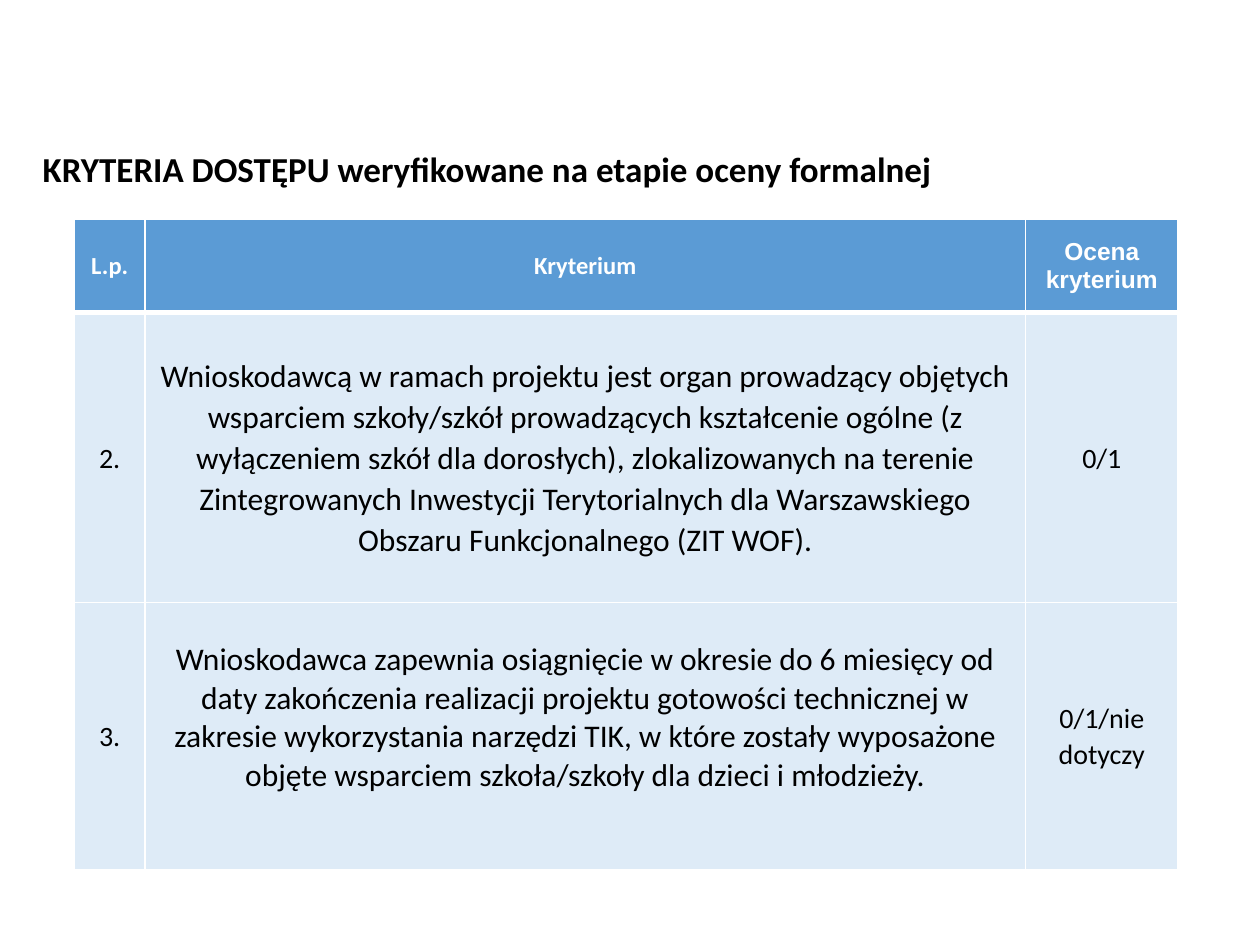
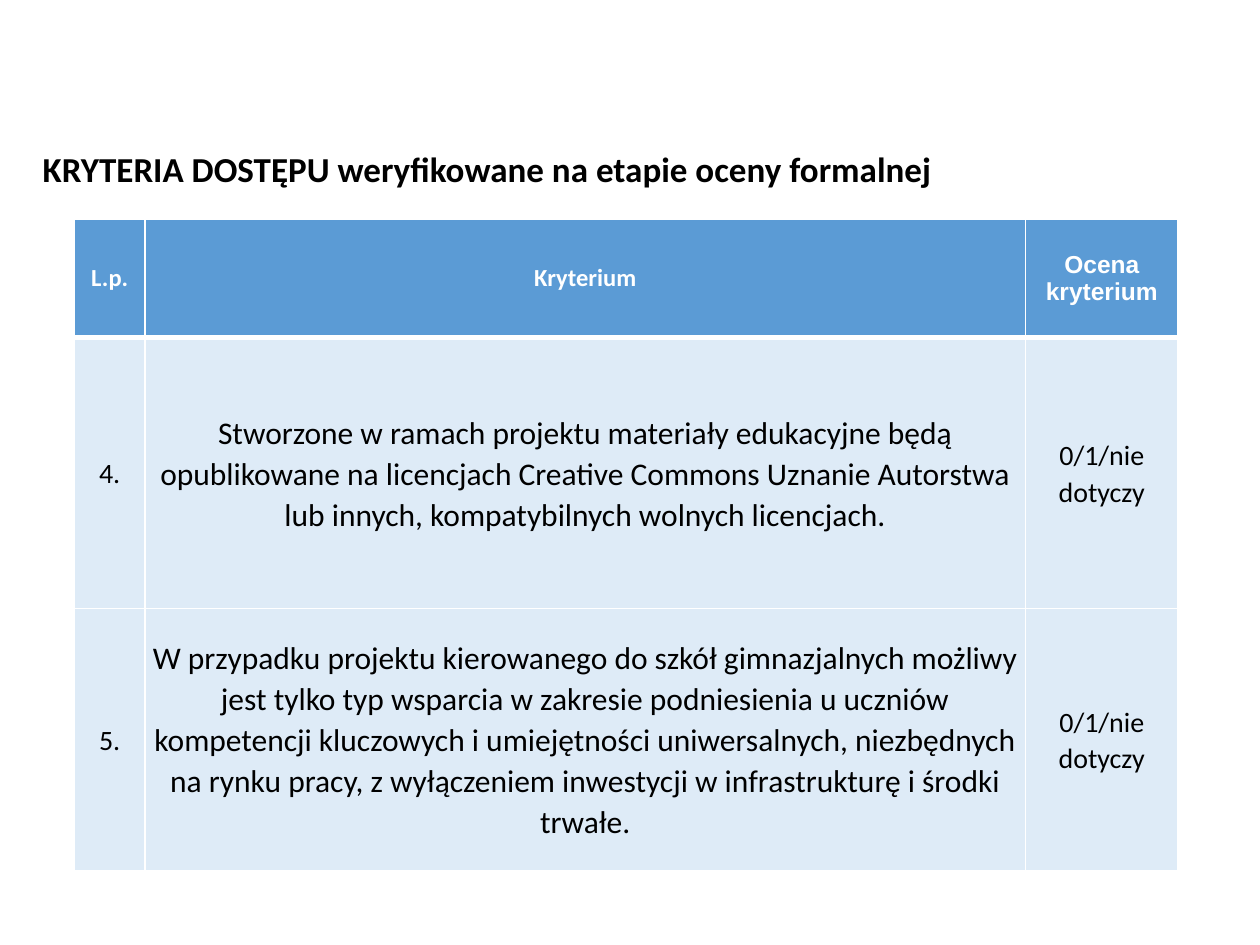
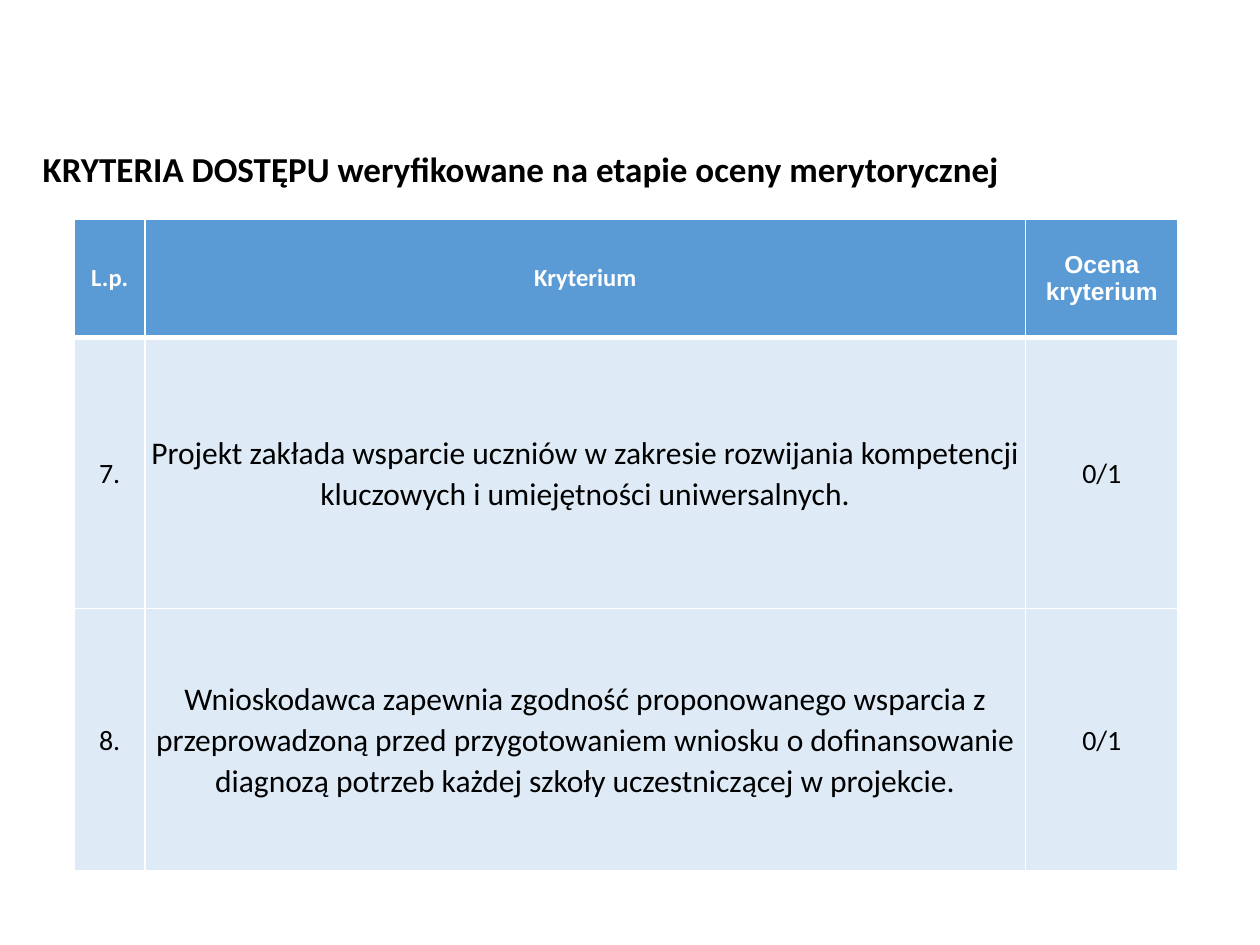
from lxml import etree
from pptx import Presentation, util as u
from pptx.dml.color import RGBColor
from pptx.enum import text
from pptx.oxml.ns import qn

# Content: title, row heights, criteria (number, wording, score)
FORMAL = "KRYTERIA DOSTĘPU weryfikowane na etapie oceny formalnej"
MERIT = "KRYTERIA DOSTĘPU weryfikowane na etapie oceny merytorycznej"
HEAD = ("L.p.", "Kryterium", "Ocena kryterium")
OPTION = "0/1/nie dotyczy"
TALL = (0.94, 2.15, 2.08)
SLIDES = [
    (FORMAL, (0.74, 2.3, 2.12), [
        ("2.", "Wnioskodawcą w ramach projektu jest organ prowadzący objętych "
               "wsparciem szkoły/szkół prowadzących kształcenie ogólne (z "
               "wyłączeniem szkół dla dorosłych), zlokalizowanych na terenie "
               "Zintegrowanych Inwestycji Terytorialnych dla Warszawskiego "
               "Obszaru Funkcjonalnego (ZIT WOF).", "0/1"),
        ("3.", "Wnioskodawca zapewnia osiągnięcie w okresie do 6 miesięcy od "
               "daty zakończenia realizacji projektu gotowości technicznej w "
               "zakresie wykorzystania narzędzi TIK, w które zostały wyposażone "
               "objęte wsparciem szkoła/szkoły dla dzieci i młodzieży.", OPTION),
    ]),
    (FORMAL, TALL, [
        ("4.", "Stworzone w ramach projektu materiały edukacyjne będą "
               "opublikowane na licencjach Creative Commons Uznanie Autorstwa "
               "lub innych, kompatybilnych wolnych licencjach.", OPTION),
        ("5.", "W przypadku projektu kierowanego do szkół gimnazjalnych możliwy "
               "jest tylko typ wsparcia w zakresie podniesienia u uczniów "
               "kompetencji kluczowych i umiejętności uniwersalnych, niezbędnych "
               "na rynku pracy, z wyłączeniem inwestycji w infrastrukturę i środki "
               "trwałe.", OPTION),
    ]),
    (MERIT, TALL, [
        ("7.", "Projekt zakłada wsparcie uczniów w zakresie rozwijania kompetencji "
               "kluczowych i umiejętności uniwersalnych.", "0/1"),
        ("8.", "Wnioskodawca zapewnia zgodność proponowanego wsparcia z "
               "przeprowadzoną przed przygotowaniem wniosku o dofinansowanie "
               "diagnozą potrzeb każdej szkoły uczestniczącej w projekcie.", "0/1"),
    ]),
]

# Shared style
BLUE, PALE, WHITE, BLACK = "5B9BD5", "DEEBF7", "FFFFFF", "000000"
COLS = (0.56, 6.99, 1.21)
SIZES = (16, 18, 16)
LEFT, TOP = 0.59, 1.74
SPACING = 1.07
INSET = u.Inches(0.04)
LIFTED = "3."  # single-spaced criterion that sits above the middle


def color(code):
    return RGBColor.from_string(code)


def style(par, size, code, bold, face="Calibri"):
    font = par.runs[0].font
    font.size, font.bold, font.name = u.Pt(size), bold, face
    font.color.rgb = color(code)


def border(cell, side, width):
    props = cell._tc.get_or_add_tcPr()
    line = etree.SubElement(props, qn(f"a:ln{side}"), w=str(u.Pt(width)))
    fill = etree.SubElement(line, qn("a:solidFill"))
    etree.SubElement(fill, qn("a:srgbClr"), val=WHITE)


def add_title(slide, title):
    box = slide.shapes.add_textbox(*map(u.Inches, (0.24, 1.12, 9.11, 0.44)))
    frame = box.text_frame
    frame.word_wrap = True
    frame.auto_size = text.MSO_AUTO_SIZE.SHAPE_TO_FIT_TEXT
    frame.vertical_anchor = text.MSO_ANCHOR.MIDDLE
    frame.text = title
    style(frame.paragraphs[0], 20, BLACK, True)


def fill_cell(cell, row, col, words, lifted):
    cell.text_frame.text = words
    cell.vertical_anchor = text.MSO_ANCHOR.MIDDLE
    par = cell.text_frame.paragraphs[0]
    par.alignment = text.PP_ALIGN.CENTER
    for side in "LRTB":
        thick = (row, side) in ((0, "B"), (1, "T"))
        border(cell, side, 3 if thick else 1)
    cell.fill.solid()
    cell.fill.fore_color.rgb = color(PALE if row else BLUE)
    if row == 0:
        style(par, 14, WHITE, True, "Arial" if col == 2 else "Calibri")
        return
    style(par, SIZES[col], BLACK, False)
    if col:
        cell.margin_left = cell.margin_right = INSET
        cell.margin_top = cell.margin_bottom = INSET
    if lifted and col == 1:
        cell.margin_bottom = u.Inches(0.33)
    else:
        par.line_spacing = SPACING


def add_grid(slide, heights, rows):
    frame = slide.shapes.add_table(
        len(heights), len(COLS),
        *map(u.Inches, (LEFT, TOP, sum(COLS), sum(heights))))
    table = frame.table
    table.horz_banding = False
    for col, width in zip(table.columns, COLS):
        col.width = u.Inches(width)
    for row, height in zip(table.rows, heights):
        row.height = u.Inches(height)
    for r, row in enumerate([HEAD] + rows):
        for c, words in enumerate(row):
            fill_cell(table.cell(r, c), r, c, words, row[0] == LIFTED)


def main():
    deck = Presentation()
    deck.slide_width, deck.slide_height = u.Inches(10), u.Inches(7.5)
    for title, heights, rows in SLIDES:
        slide = deck.slides.add_slide(deck.slide_layouts[6])
        add_grid(slide, heights, rows)
        add_title(slide, title)
    deck.save("out.pptx")


if __name__ == "__main__":
    main()
